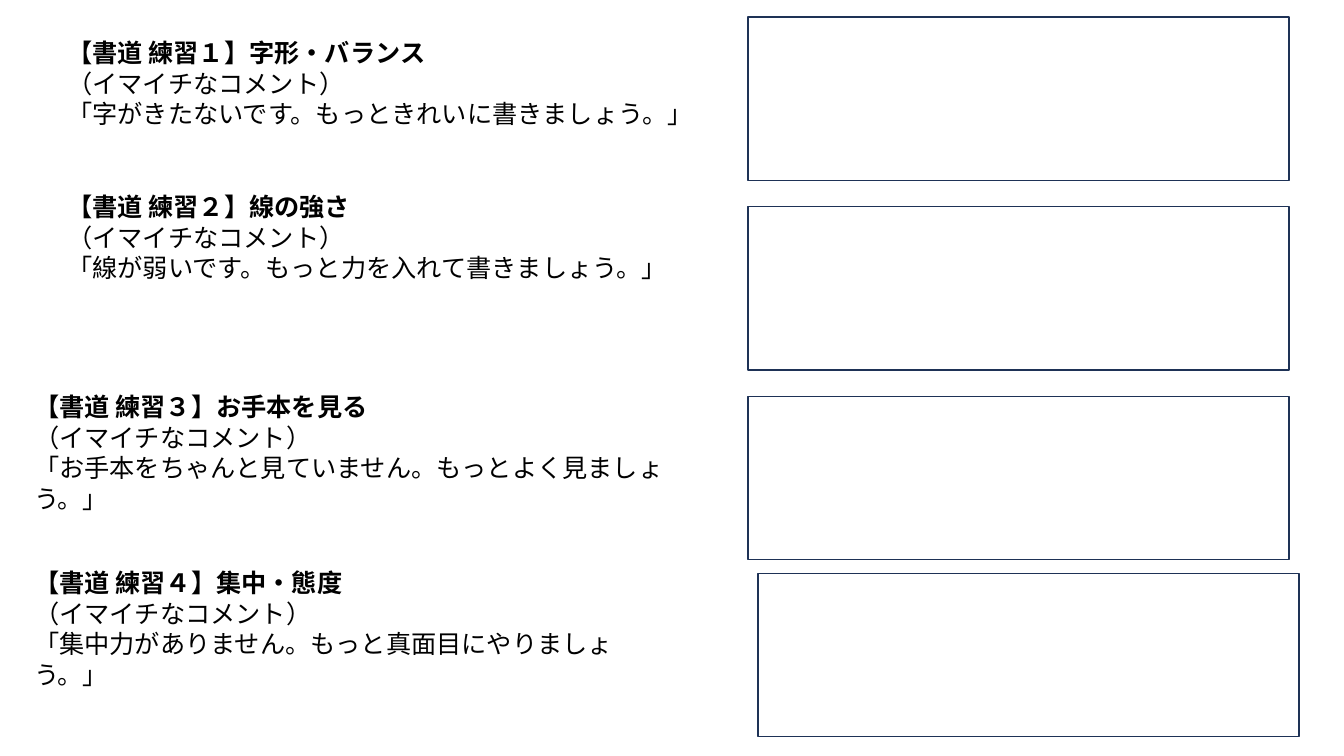
"""Build a calligraphy feedback slide: four weak comments beside empty answer boxes."""
import pptx
import pptx.dml.color
import pptx.enum.shapes
import pptx.enum.text
import pptx.oxml
import pptx.oxml.ns
import pptx.util
from dataclasses import dataclass

Pt = pptx.util.Pt
RGB = pptx.dml.color.RGBColor


@dataclass(frozen=True)
class Theme:
    font: str = "Noto Sans CJK JP"
    size: float = 18
    line_spacing: float = 21.8
    ink: RGB = RGB(0, 0, 0)
    paper: RGB = RGB(255, 255, 255)
    border: RGB = RGB(0x1E, 0x32, 0x56)


theme = Theme()


def apply(target, values):
    for name, value in values.items():
        setattr(target, name, value)


deck = pptx.Presentation()
apply(deck, {"slide_width": Pt(960), "slide_height": Pt(540)})
slide = deck.slides.add_slide(deck.slide_layouts[6])

answer_width, answer_height = 386.6, 116.6
comment_width, padding = 480.2, 7.2
caption = "（イマイチなコメント）"

answer_positions = [(534.2, 12.2), (534.2, 147.6), (534.2, 283), (541.4, 409.7)]
for left, top in answer_positions:
    answer = slide.shapes.add_shape(
        pptx.enum.shapes.MSO_SHAPE.RECTANGLE,
        Pt(left), Pt(top), Pt(answer_width), Pt(answer_height))
    answer.shadow.inherit = False
    answer.fill.solid()
    answer.fill.fore_color.rgb = theme.paper
    answer.line.color.rgb = theme.border
    answer.line.width = Pt(1)

exercises = [
    (41, 23, 3, "【書道 練習１】字形・バランス", "「字がきたないです。もっときれいに書きましょう。」"),
    (41, 133.2, 3, "【書道 練習２】線の強さ", "「線が弱いです。もっと力を入れて書きましょう。」"),
    (17.3, 275.8, 4, "【書道 練習３】お手本を見る", "「お手本をちゃんと見ていません。もっとよく見ましょう。」"),
    (17.3, 401.8, 4, "【書道 練習４】集中・態度", "「集中力がありません。もっと真面目にやりましょう。」"),
]
for left, top, line_count, heading, remark in exercises:
    comment = slide.shapes.add_textbox(
        Pt(left), Pt(top), Pt(comment_width),
        Pt(line_count * theme.line_spacing + padding))
    frame = comment.text_frame
    apply(frame, {"word_wrap": True,
                  "auto_size": pptx.enum.text.MSO_AUTO_SIZE.SHAPE_TO_FIT_TEXT,
                  "text": "\n".join([heading, caption, remark])})
    for index, paragraph in enumerate(frame.paragraphs):
        paragraph.line_spacing = Pt(theme.line_spacing)
        run = paragraph.runs[0]
        apply(run.font, {"name": theme.font, "size": Pt(theme.size), "bold": index == 0})
        run.font.color.rgb = theme.ink
        east_asian = pptx.oxml.parse_xml(
            f'<a:ea {pptx.oxml.ns.nsdecls("a")} typeface="{theme.font}"/>')
        run.font._element.append(east_asian)

deck.save("out.pptx")
